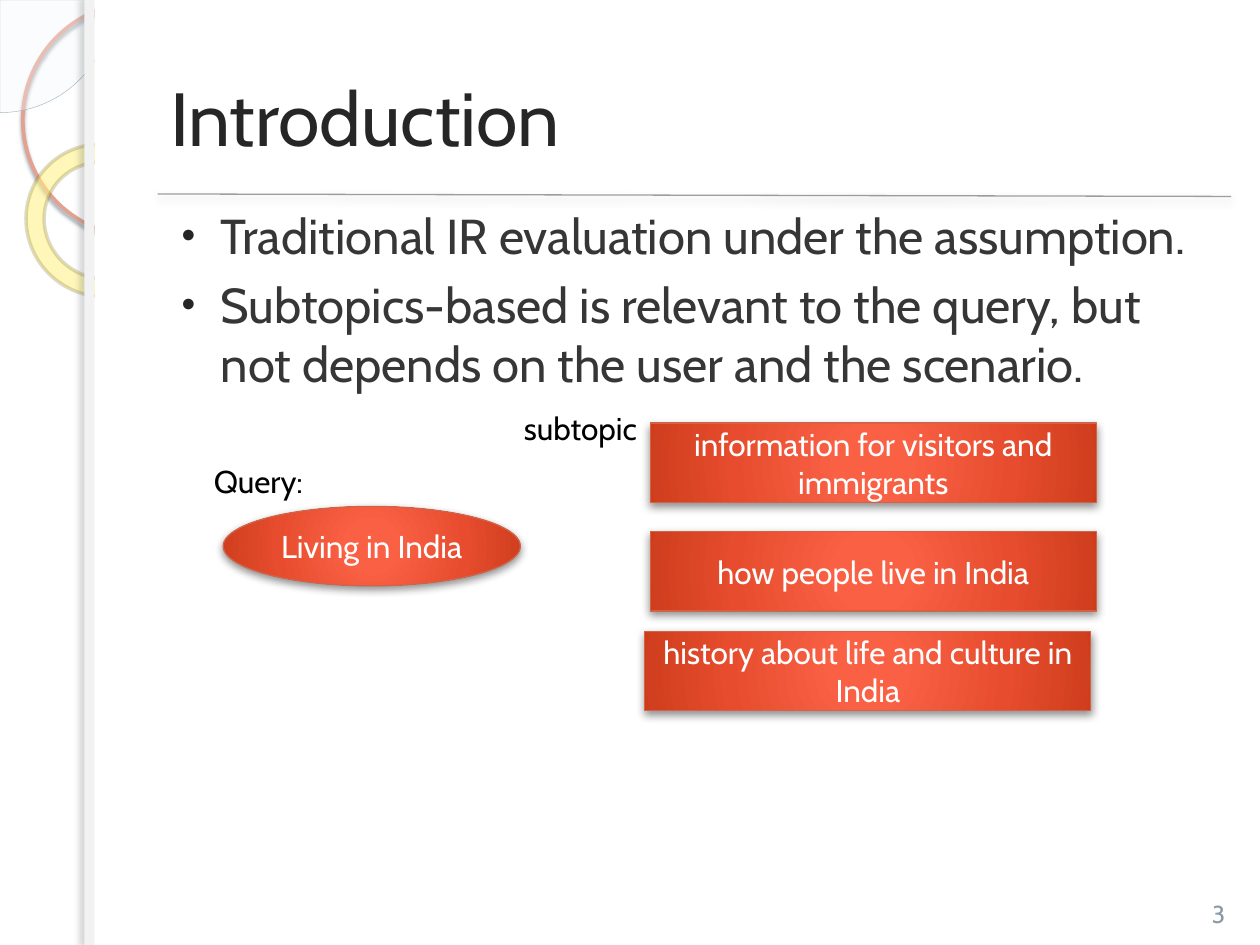
from lxml import etree
from pptx import Presentation
from pptx import util as u
from pptx.dml.color import RGBColor
from pptx.enum import shapes, text
from pptx.oxml import ns, parse_xml

FONT = "Cabin"
KIND = shapes.MSO_SHAPE
TITLE = "Introduction"
BULLETS = [
    "Traditional IR evaluation under the assumption.",
    "Subtopics-based is relevant to the query, but not depends on the user and the scenario.",
]
LABELS = [("Query:", (4.06, 9.19, 2.39, 1.02)), ("subtopic", (10.31, 8.13, 3.2, 1.02))]
NODE_H = 1.6
NODES = [
    ("Living in India", KIND.OVAL, 4.5, 10.21, 5.99),
    ("information for visitors and immigrants", KIND.RECTANGLE, 13.11, 8.53, 8.99),
    ("how people live in India", KIND.RECTANGLE, 13.11, 10.72, 8.99),
    ("history about life and culture in India", KIND.RECTANGLE, 13, 12.73, 8.99),
]
GLOW = [(0, "FB6044"), (15, "FA6044"), (62, "E64C2D"), (97, "D03F1F"), (100, "D03915")]
NODE_SHADOW = ("000000", 43, 5, 2, 90)
DECOR = [
    dict(kind=KIND.OVAL, box=(0.46, 0.05, 4.72, 4.72), line=("E3A192", 2.15, 100),
         shadow=("8E9CA2", 85, 2, 2, 90)),
    dict(kind=KIND.PIE, box=(-2.27, -2.27, 4.54, 4.54), adj=(0, 54), fill="F4F8FA",
         alpha=33, line=("A1B6C0", 0.25, 100)),
    dict(kind=KIND.DONUT, box=(0.51, 2.92, 3.12, 3.05), adj=(0.12,), fill="FFF185",
         alpha=57, line=("665A00", 2, 21), rotation=38.6),
    dict(kind=KIND.RECTANGLE, box=(1.91, 0, 23.49, 19.05), fill="FFFFFF"),
    dict(kind=KIND.RECTANGLE, box=(1.7, 0, 0.2, 19.05), fill="F2F2F2",
         shadow=("61686B", 25, 3, 3, 180)),
]

prs = Presentation()
prs.slide_width, prs.slide_height = u.Cm(25.4), u.Cm(19.05)
slide = prs.slides.add_slide(prs.slide_layouts[6])


def rgb(value):
    return RGBColor.from_string(value)


def sub(parent, tag, **attrs):
    return etree.SubElement(parent, ns.qn(tag), {k: str(v) for k, v in attrs.items()})


def set_alpha(parent, percent):
    for color in parent.iterchildren(ns.qn("a:solidFill")):
        sub(color[0], "a:alpha", val=percent * 1000)


def set_line(s, color, width, alpha):
    s.line.color.rgb = rgb(color)
    s.line.width = u.Pt(width)
    set_alpha(s.line._get_or_add_ln(), alpha)


def set_shadow(s, shadow):
    effects = sub(s._element.spPr, "a:effectLst")
    if shadow:
        color, alpha, blur, dist, angle = shadow
        outer = sub(effects, "a:outerShdw", blurRad=u.Pt(blur), dist=u.Pt(dist),
                    dir=angle * 60000, rotWithShape=0)
        sub(sub(outer, "a:srgbClr", val=color), "a:alpha", val=alpha * 1000)


def set_glow(s):
    grad = parse_xml(f"<a:gradFill {ns.nsdecls('a')}/>")
    stops = sub(grad, "a:gsLst")
    for pos, color in GLOW:
        sub(sub(stops, "a:gs", pos=pos * 1000), "a:srgbClr", val=color)
    sub(sub(grad, "a:path", path="circle"), "a:fillToRect", l=50000, t=50000, r=50000, b=50000)
    sppr = s._element.spPr
    sppr.replace(sppr.find(ns.qn("a:noFill")), grad)


def add_shape(kind, box, fill=None, alpha=100, line=None, shadow=None, adj=(), rotation=0):
    s = slide.shapes.add_shape(kind, *map(u.Cm, box))
    s.rotation = rotation
    for i, value in enumerate(adj):
        s.adjustments[i] = value
    if fill:
        s.fill.solid()
        s.fill.fore_color.rgb = rgb(fill)
        set_alpha(s._element.spPr, alpha)
    else:
        s.fill.background()
    if line:
        set_line(s, *line)
    else:
        s.line.fill.background()
    set_shadow(s, shadow)
    return s


def add_bullet(p):
    ppr = p._p.get_or_add_pPr()
    ppr.set("marL", str(u.Cm(1.02)))
    ppr.set("indent", str(u.Cm(-0.79)))
    sub(sub(ppr, "a:buClr"), "a:srgbClr", val="262626")
    sub(ppr, "a:buSzPct", val=80000)
    sub(ppr, "a:buFont", typeface="Arial")
    sub(ppr, "a:buChar", char="•")


def write(s, *lines, size=18, color="000000", align="LEFT", anchor="TOP", bullet=False):
    tf = s.text_frame
    tf.word_wrap = True
    tf.vertical_anchor = text.MSO_ANCHOR[anchor]
    for i, line in enumerate(lines):
        p = tf.add_paragraph() if i else tf.paragraphs[0]
        p.alignment = text.PP_ALIGN[align]
        if bullet:
            p.space_before = u.Pt(6)
            add_bullet(p)
        r = p.add_run()
        r.text = line
        r.font.name, r.font.size = FONT, u.Pt(size)
        r.font.color.rgb = rgb(color)


def add_text(box, *lines, **fmt):
    write(slide.shapes.add_textbox(*map(u.Cm, box)), *lines, **fmt)


for item in DECOR:
    add_shape(**item)

rule = slide.shapes.add_connector(shapes.MSO_CONNECTOR.STRAIGHT,
                                  *map(u.Cm, (3.18, 3.91, 24.82, 3.96)))
set_line(rule, "463E38", 0.75, 50)
set_shadow(rule, NODE_SHADOW)

add_text((3.18, 0.76, 21.64, 3.18), TITLE, size=43, color="262626", anchor="MIDDLE")
add_text((3.18, 4.01, 21.64, 13.34), *BULLETS, size=28, color="373637", bullet=True)
add_text((23.93, 17.53, 1.27, 1.32), "3", size=14, color="899BA4",
         align="CENTER", anchor="BOTTOM")

for label, kind, x, y, w in NODES:
    s = add_shape(kind, (x, y, w, NODE_H), line=("D16349", 0.75, 100), shadow=NODE_SHADOW)
    set_glow(s)
    write(s, label, color="FFFFFF", align="CENTER", anchor="MIDDLE")

for label, box in LABELS:
    add_text(box, label)

prs.save("out.pptx")
